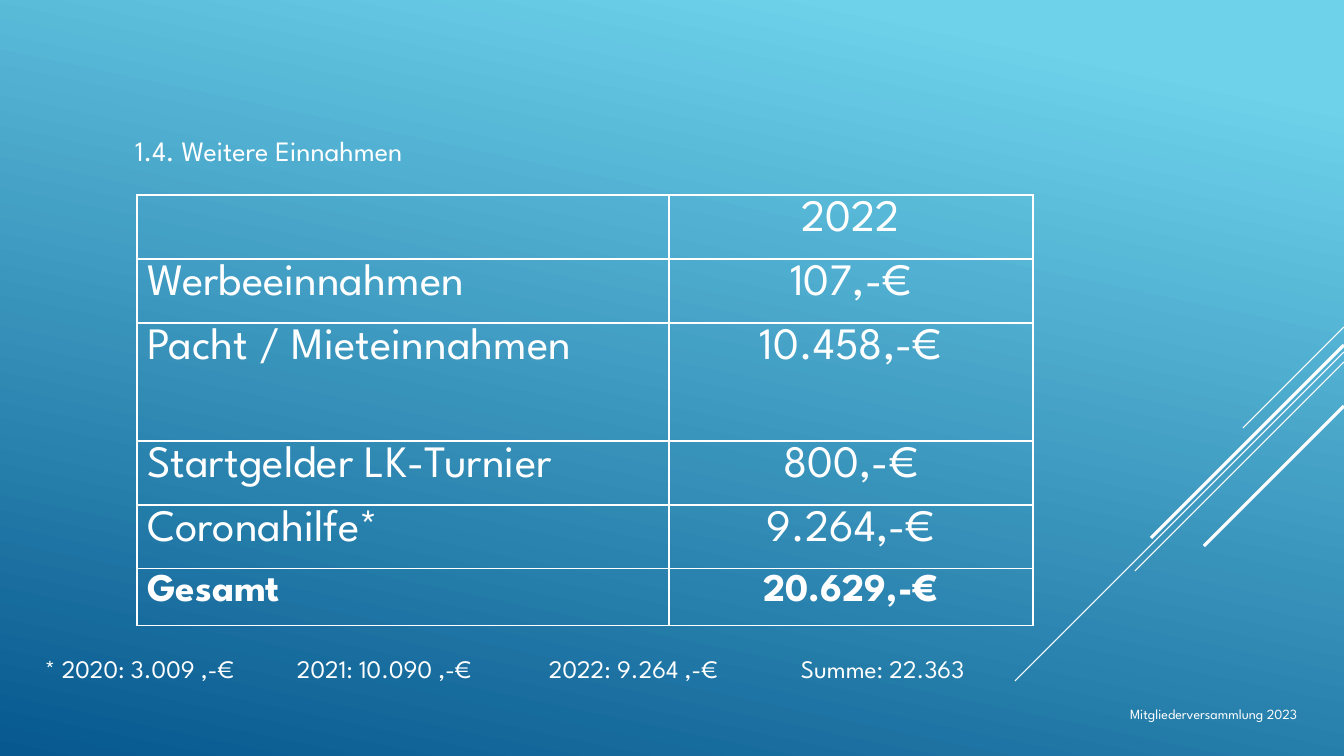
"""Builds the slide on other income: heading, table, footnote and diagonal lines."""
from pptx import Presentation
from pptx.dml.color import RGBColor
from pptx.enum import shapes, text
from pptx.oxml.ns import qn
from pptx.util import Pt
from lxml import etree

HEADING = "1.4. Weitere Einnahmen"
INCOME = [
    ("", "2022"),
    ("Werbeeinnahmen", "107,-€"),
    ("Pacht / Mieteinnahmen", "10.458,-€"),
    ("Startgelder LK-Turnier", "800,-€"),
    ("Coronahilfe*", "9.264,-€"),
    ("Gesamt", "20.629,-€"),
]
CORONA_AID = ["* 2020: 3.009 ,-€", "2021: 10.090 ,-€", "2022: 9.264 ,-€", "Summe: 22.363"]
EVENT = "Mitgliederversammlung 2023"

COLUMN_WIDTHS = [532, 364]
ROW_HEIGHTS = [64, 64, 118, 64, 64, 57]
DIAGONALS = [(327, 101, 0.75), (352, 329, 0.75), (362, 209, 0.75), (345, 193, 2.25), (406, 140, 2.25)]
WIDTH, HEIGHT = 1344, 756
AID_STEP = 252
FONT, WHITE = "League Spartan", "FFFFFF"
GRADIENT = [(0.1, "6ED2EB"), (1, "06588E")]


def px(length):
    return round(length * 914400 / 100.8)


def color(value):
    return RGBColor.from_string(value)


def write(frame, content, size, align=text.PP_ALIGN.LEFT, bold=False):
    line = frame.paragraphs[0]
    line.text = content
    line.alignment = align
    line.font.name = FONT
    line.font.size = Pt(size)
    line.font.bold = bold
    line.font.color.rgb = color(WHITE)


def add_label(slide, box, content, size, align=text.PP_ALIGN.LEFT):
    frame = slide.shapes.add_textbox(*map(px, box)).text_frame
    frame.word_wrap = True
    write(frame, content, size, align)
    return frame


def outline(cell):
    borders = cell._tc.get_or_add_tcPr()
    for side in ("a:lnL", "a:lnR", "a:lnT", "a:lnB"):
        border = etree.SubElement(borders, qn(side), w=str(Pt(1)))
        paint = etree.SubElement(border, qn("a:solidFill"))
        etree.SubElement(paint, qn("a:srgbClr"), val=WHITE)


def paint_background(slide):
    fill = slide.background.fill
    fill.gradient()
    fill.gradient_angle = 258
    for stop, (position, shade) in zip(fill.gradient_stops, GRADIENT):
        stop.position = position
        stop.color.rgb = color(shade)


def add_diagonals(slide):
    for top, run, weight in DIAGONALS:
        ends = map(px, (WIDTH, top, WIDTH - run, top + run))
        diagonal = slide.shapes.add_connector(shapes.MSO_CONNECTOR.STRAIGHT, *ends)
        diagonal.line.color.rgb = color(WHITE)
        diagonal.line.width = Pt(weight)
        etree.SubElement(diagonal._element.spPr, qn("a:effectLst"))


def add_heading(slide):
    heading = slide.shapes.title
    heading.left, heading.top, heading.width, heading.height = map(px, (125, 130, 900, 40))
    heading.text_frame.vertical_anchor = text.MSO_ANCHOR.MIDDLE
    write(heading.text_frame, HEADING, 20)


def add_income(slide):
    box = map(px, (137, 195, sum(COLUMN_WIDTHS), sum(ROW_HEIGHTS)))
    income = slide.shapes.add_table(len(INCOME), len(COLUMN_WIDTHS), *box).table
    income.first_row = income.horz_banding = False
    for column, width in zip(income.columns, COLUMN_WIDTHS):
        column.width = px(width)
    for row, height, entries in zip(income.rows, ROW_HEIGHTS, INCOME):
        row.height = px(height)
        total = entries == INCOME[-1]
        for cell, entry, align in zip(row.cells, entries, (text.PP_ALIGN.LEFT, text.PP_ALIGN.CENTER)):
            outline(cell)
            cell.fill.background()
            write(cell.text_frame, entry, 28 if total else 32, align, total)


def add_corona_aid(slide):
    aid = add_label(slide, (35, 648, 969, 40), "\t".join(CORONA_AID), 18)
    properties = aid.paragraphs[0]._p.get_or_add_pPr()
    tabs = etree.Element(qn("a:tabLst"))
    properties.insert(0, tabs)
    for index in range(1, len(CORONA_AID)):
        etree.SubElement(tabs, qn("a:tab"), pos=str(px(AID_STEP * index)), algn="l")


def main():
    deck = Presentation()
    deck.slide_width, deck.slide_height = px(WIDTH), px(HEIGHT)
    slide = deck.slides.add_slide(deck.slide_layouts[5])
    paint_background(slide)
    add_diagonals(slide)
    add_heading(slide)
    add_income(slide)
    add_label(slide, (475, 701, 832, 40), EVENT, 10, text.PP_ALIGN.RIGHT)
    add_corona_aid(slide)
    deck.save("out.pptx")


if __name__ == "__main__":
    main()
